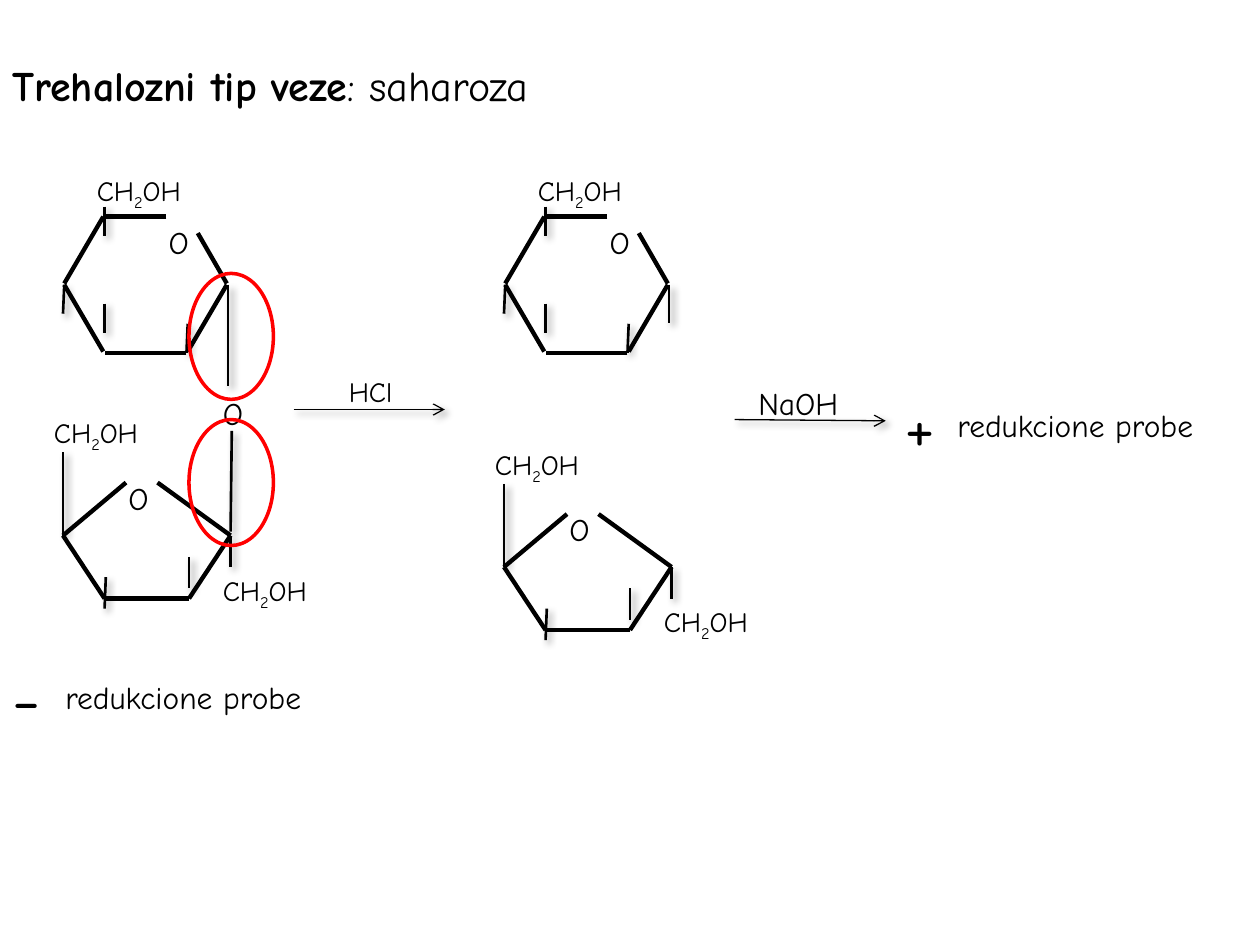
from lxml.etree import SubElement
from pptx import Presentation
from pptx.dml.color import RGBColor as RGB
from pptx.enum.shapes import MSO_CONNECTOR as LINE, MSO_SHAPE as SHAPE
from pptx.enum.text import MSO_ANCHOR as ANCHOR, MSO_AUTO_SIZE as AUTO, PP_ALIGN as ALIGN
from pptx.oxml.ns import qn
from pptx.util import Inches, Pt

FONT = "Comic Neue"
COLORS = {"ink": "000000", "mark": "FF0000"}
CH2OH = ("CH", "2", "OH")

# Lines are x1, y1, x2, y2; labels are parts, size, left, top, width, height.
GLUCOSE = {
    "ring": [
        (0.82, 2.79, 0.51, 2.26), (1.32, 1.72, 0.83, 1.72), (0.82, 1.72, 0.51, 2.25),
        (1.8, 2.25, 1.57, 1.85), (1.48, 2.8, 0.83, 2.8), (1.8, 2.26, 1.49, 2.79),
    ],
    "bonds": [
        (1.49, 2.57, 1.48, 2.8), (0.83, 2.41, 0.83, 2.64),
        (0.51, 2.26, 0.5, 2.49), (0.83, 1.64, 0.83, 1.87),
    ],
    "labels": [(("O",), 18, 1.24, 1.72, 0.4, 0.37), (CH2OH, 16, 0.67, 1.33, 0.93, 0.34)],
}
FRUCTOSE = {
    "ring": [
        (1.5, 4.75, 0.83, 4.75), (0.5, 4.25, 0.83, 4.75), (1.83, 4.25, 1.5, 4.75),
        (0.5, 4.25, 1, 3.83), (1.25, 3.83, 1.83, 4.25),
    ],
    "bonds": [
        (0.5, 3.59, 0.5, 4.25), (1.5, 4.42, 1.5, 4.67),
        (1.83, 4.25, 1.83, 4.5), (0.84, 4.58, 0.83, 4.83),
    ],
    "labels": [
        (("O",), 18, 0.92, 3.75, 0.4, 0.4), (CH2OH, 16, 0.33, 3.25, 0.95, 0.37),
        (CH2OH, 16, 1.67, 4.5, 0.95, 0.37),
    ],
}
SUGARS = [(GLUCOSE, 0, 0), (FRUCTOSE, 0, 0), (GLUCOSE, 3.5, 0), (FRUCTOSE, 3.5, 0.25)]
LINKS = [(1.81, 2.26, 1.81, 3.06), (1.84, 3.42, 1.83, 4.22), (5.31, 2.26, 5.31, 2.56)]
ARROWS = [(2.33, 3.25, 3.53, 3.25), (5.83, 3.33, 7.03, 3.34)]
LABELS = [
    (("O",), 18, 1.67, 3.08, 0.4, 0.37),
    (("HCl",), 16, 2.67, 2.92, 0.57, 0.37),
    (("NaOH",), 18, 5.92, 3, 0.93, 0.4),
    (("+",), 40, 7.08, 2.98, 0.47, 0.77),
    (("redukcione probe",), 18, 7.5, 3.17, 2.23, 0.4),
    (("-",), 40, 0, 5.14, 0.44, 0.77),
    (("redukcione probe",), 18, 0.42, 5.33, 2.23, 0.4),
]
MARKS = [(1.5, 2.17, 0.67, 1), (1.5, 3.33, 0.67, 1)]
TITLE = [("Trehalozni tip veze", True), (": saharoza", False)]


def inches(*nums):
    return [Inches(n) for n in nums]


def add_run(para, text, size, bold=False):
    run = para.add_run()
    run.text = text
    font = run.font
    font.name, font.size, font.bold = FONT, Pt(size), bold
    font.color.rgb = RGB.from_string(COLORS["ink"])
    return run


def fit(frame):
    """Keep the text on one line, in a frame that hugs it."""
    frame.word_wrap = False
    frame.auto_size = AUTO.SHAPE_TO_FIT_TEXT
    return frame.paragraphs[0]


def add_label(slide, parts, size, x, y, w, h):
    """Write the parts as runs, with digits as subscripts."""
    box = slide.shapes.add_textbox(*inches(x, y, w, h))
    para = fit(box.text_frame)
    for part in parts:
        run = add_run(para, part, size)
        if part.isdigit():
            run.font._element.set("baseline", "-25000")


def add_line(shapes, ends, width, shadow=True, arrow=False):
    line = shapes.add_connector(LINE.STRAIGHT, *inches(*ends))
    line.line.width = Pt(width)
    line.line.color.rgb = RGB.from_string(COLORS["ink"])
    if arrow:
        SubElement(line.line._get_or_add_ln(), qn("a:tailEnd"), type="arrow")
    fx = SubElement(line._element.spPr, qn("a:effectLst"))
    if shadow:
        cast = SubElement(fx, qn("a:outerShdw"), blurRad=str(Pt(4)), dist=str(Pt(3)),
                          dir=str(45 * 60000), algn="tl", rotWithShape="0")
        tint = SubElement(cast, qn("a:srgbClr"), val=COLORS["ink"])
        SubElement(tint, qn("a:alpha"), val="40000")


def add_sugar(slide, sugar, dx, dy):
    def shift(x1, y1, x2, y2):
        return x1 + dx, y1 + dy, x2 + dx, y2 + dy

    ring = slide.shapes.add_group_shape()
    for ends in sugar["ring"]:
        add_line(ring.shapes, shift(*ends), 2.5, shadow=False)
    for ends in sugar["bonds"]:
        add_line(slide.shapes, shift(*ends), 1.5)
    for parts, size, x, y, w, h in sugar["labels"]:
        add_label(slide, parts, size, x + dx, y + dy, w, h)


def add_mark(slide, place):
    mark = slide.shapes.add_shape(SHAPE.OVAL, *inches(*place))
    mark.shadow.inherit = False
    mark.fill.background()
    mark.line.width = Pt(2)
    mark.line.color.rgb = RGB.from_string(COLORS["mark"])


def add_title(slide):
    title = slide.shapes.title
    title.left, title.top, title.width, title.height = inches(0, 0.42, 4.93, 0.51)
    title.text_frame.vertical_anchor = ANCHOR.TOP
    para = fit(title.text_frame)
    para.alignment = ALIGN.LEFT
    for text, bold in TITLE:
        add_run(para, text, 24, bold)


def main():
    deck = Presentation()
    deck.slide_width, deck.slide_height = inches(10, 7.5)
    slide = deck.slides.add_slide(deck.slide_layouts[5])
    add_title(slide)
    for sugar in SUGARS:
        add_sugar(slide, *sugar)
    for ends in LINKS:
        add_line(slide.shapes, ends, 1.5)
    for ends in ARROWS:
        add_line(slide.shapes, ends, 0.75, arrow=True)
    for label in LABELS:
        add_label(slide, *label)
    for place in MARKS:
        add_mark(slide, place)
    deck.save("out.pptx")


if __name__ == "__main__":
    main()
